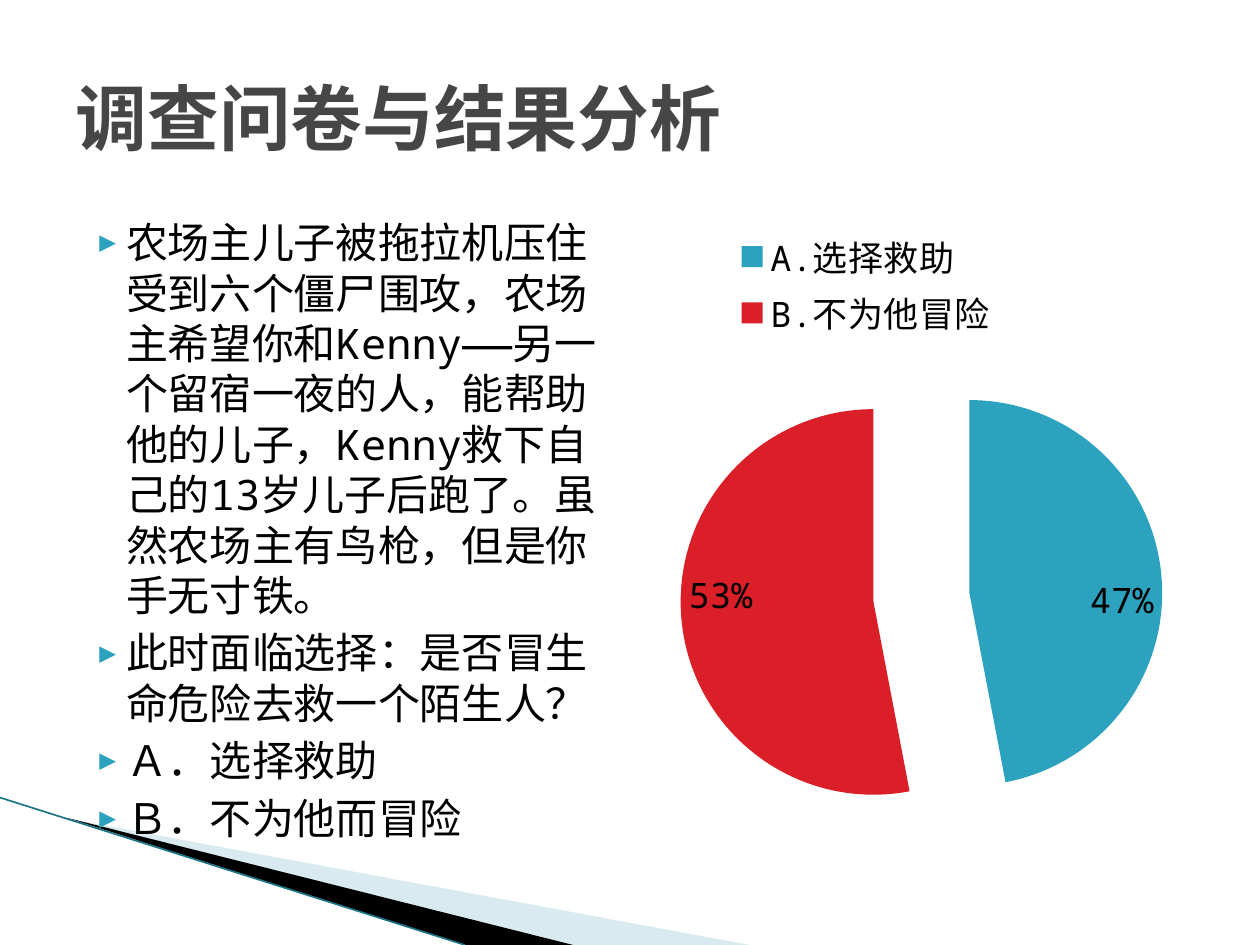
from dataclasses import dataclass

from lxml import etree
from pptx import Presentation
from pptx.chart.data import CategoryChartData
from pptx.dml.color import RGBColor
from pptx.enum.chart import XL_CHART_TYPE, XL_LABEL_POSITION, XL_LEGEND_POSITION
from pptx.enum.shapes import MSO_CONNECTOR
from pptx.enum.text import MSO_ANCHOR, MSO_AUTO_SIZE, PP_ALIGN
from pptx.oxml import parse_xml
from pptx.oxml.ns import nsdecls, qn
from pptx.util import Inches, Pt

PIE = XL_CHART_TYPE.PIE_EXPLODED
INSIDE_END = XL_LABEL_POSITION.INSIDE_END
LEGEND_TOP = XL_LEGEND_POSITION.TOP
STRAIGHT = MSO_CONNECTOR.STRAIGHT
LEFT = PP_ALIGN.LEFT
TOP, MIDDLE = MSO_ANCHOR.TOP, MSO_ANCHOR.MIDDLE
NO_AUTOFIT = MSO_AUTO_SIZE.NONE


@dataclass(frozen=True)
class Theme:
    font: str = "Noto Sans Mono"
    heading: str = "464646"
    ink: str = "000000"
    teal: str = "2DA2BF"
    red: str = "DA1F28"
    pale: str = "A0CBDC"
    edge: str = "1B7587"
    title_size: float = 41
    body_size: float = 24
    body_leading: float = 28.8
    chart_size: float = 20


THEME = Theme()
QUESTION = [
    "农场主儿子被拖拉机压住受到六个僵尸围攻，农场主希望你和Kenny——另一个留宿一夜的人，"
    "能帮助他的儿子，Kenny救下自己的13岁儿子后跑了。虽然农场主有鸟枪，但是你手无寸铁。",
    "此时面临选择：是否冒生命危险去救一个陌生人？",
    "Ａ．选择救助",
    "Ｂ．不为他而冒险",
]
ANSWERS = {"A.选择救助": (47, THEME.teal), "B.不为他冒险": (53, THEME.red)}


def rgb(value):
    return RGBColor.from_string(value)


def style(font, size, color, bold=False):
    font.name = THEME.font
    font.size = Pt(size)
    font.bold = bold
    font.color.rgb = rgb(color)


def place(shape, box):
    shape.left, shape.top, shape.width, shape.height = map(Inches, box)


def add_wedge(slide, points, color):
    start, *rest = [(Inches(x), Inches(y)) for x, y in points]
    builder = slide.shapes.build_freeform(*start)
    builder.add_line_segments(rest, close=True)
    wedge = builder.convert_to_shape()
    wedge.shadow.inherit = False
    wedge.fill.solid()
    wedge.fill.fore_color.rgb = rgb(color)
    wedge.line.fill.background()
    return wedge


def add_corner(slide, box):
    left, top, width, height = box
    right, bottom = left + width, top + height
    pale = add_wedge(slide, [(0.55, 6.5), (right, bottom), (4.56, bottom)], THEME.pale)
    color = pale.fill._xPr.find(".//" + qn("a:srgbClr"))
    etree.SubElement(color, qn("a:alpha"), val="40000")
    dark = add_wedge(slide, [(0.53, 6.49), (4.55, bottom), (3.69, bottom)], THEME.ink)
    edge = slide.shapes.add_connector(
        STRAIGHT, Inches(left), Inches(top), Inches(3.69), Inches(bottom))
    edge.line.color.rgb = rgb(THEME.edge)
    edge.line.width = Pt(0.95)
    etree.SubElement(edge._element.spPr, qn("a:effectLst"))
    for depth, part in enumerate((pale, dark, edge), start=2):
        slide.shapes._spTree.insert(depth, part._element)


def add_heading(slide, box, wording):
    title = slide.shapes.title
    place(title, box)
    frame = title.text_frame
    frame.auto_size = NO_AUTOFIT
    frame.vertical_anchor = MIDDLE
    paragraph = frame.paragraphs[0]
    paragraph.alignment = LEFT
    run = paragraph.add_run()
    run.text = wording
    style(run.font, THEME.title_size, THEME.heading, bold=True)


def add_bullet(paragraph):
    props = paragraph._p.get_or_add_pPr()
    props.set("marL", str(Inches(0.4)))
    props.set("indent", str(Inches(-0.28)))
    color = etree.SubElement(props, qn("a:buClr"))
    etree.SubElement(color, qn("a:srgbClr"), val=THEME.teal)
    etree.SubElement(props, qn("a:buSzPct"), val="68000")
    etree.SubElement(props, qn("a:buFont"), typeface=THEME.font)
    etree.SubElement(props, qn("a:buChar"), char="▶")


def add_question(slide, box, wordings):
    body = slide.placeholders[1]
    place(body, box)
    frame = body.text_frame
    frame.auto_size = NO_AUTOFIT
    frame.vertical_anchor = TOP
    frame.margin_top = Inches(0.1)
    for index, wording in enumerate(wordings):
        paragraph = frame.add_paragraph() if index else frame.paragraphs[0]
        add_bullet(paragraph)
        paragraph.alignment = LEFT
        paragraph.line_spacing = Pt(THEME.body_leading)
        paragraph.space_before = Pt(4 if index else 0)
        run = paragraph.add_run()
        run.text = wording
        style(run.font, THEME.body_size, THEME.ink)


def manual_layout(x, y, width, height, inner=False):
    target = '<c:layoutTarget val="inner"/>' if inner else ""
    return parse_xml(
        f'<c:layout {nsdecls("c")}><c:manualLayout>{target}'
        '<c:xMode val="edge"/><c:yMode val="edge"/>'
        f'<c:x val="{x}"/><c:y val="{y}"/><c:w val="{width}"/><c:h val="{height}"/>'
        '</c:manualLayout></c:layout>')


def add_results(slide, box, answers):
    data = CategoryChartData()
    data.categories = list(answers)
    data.add_series("Series 1", [share for share, _ in answers.values()])
    chart = slide.shapes.add_chart(PIE, *map(Inches, box), data).chart
    style(chart.font, THEME.chart_size, THEME.ink)
    chart.has_title = False
    chart.has_legend = True
    legend = chart.legend
    legend.position = LEGEND_TOP
    legend.include_in_layout = False
    style(legend.font, THEME.chart_size, THEME.ink)
    for old in legend._element.findall(qn("c:layout")):
        legend._element.remove(old)
    legend._element.find(qn("c:legendPos")).addnext(manual_layout(0.16, 0.03, 0.5, 0.18))

    plot = chart.plots[0]
    plot.vary_by_categories = True
    area = chart._chartSpace.chart.plotArea
    for old in area.findall(qn("c:layout")):
        area.remove(old)
    area.insert(0, manual_layout(0.09, 0.23, 0.83, 0.74, inner=True))
    plot.has_data_labels = True
    labels = plot.data_labels
    labels.show_percentage = True
    labels.show_value = False
    labels.number_format = "0%"
    labels.number_format_is_linked = False
    labels.position = INSIDE_END
    style(labels.font, THEME.chart_size, THEME.ink)
    series = plot.series[0]
    for index, (_, color) in enumerate(answers.values()):
        fill = series.points[index].format.fill
        fill.solid()
        fill.fore_color.rgb = rgb(color)
    for explosion in series._element.iter(qn("c:explosion")):
        explosion.set("val", "25")


def main():
    deck = Presentation()
    deck.slide_width, deck.slide_height = Inches(10), Inches(7.5)
    slide = deck.slides.add_slide(deck.slide_layouts[1])
    add_corner(slide, (0, 6.33, 5.95, 1.17))
    add_heading(slide, (0.5, 0.3, 9, 1.25), "调查问卷与结果分析")
    add_question(slide, (0.5, 1.62, 4.58, 4.95), QUESTION)
    add_results(slide, (4.97, 1.64, 4.64, 5.17), ANSWERS)
    deck.save("out.pptx")


if __name__ == "__main__":
    main()
